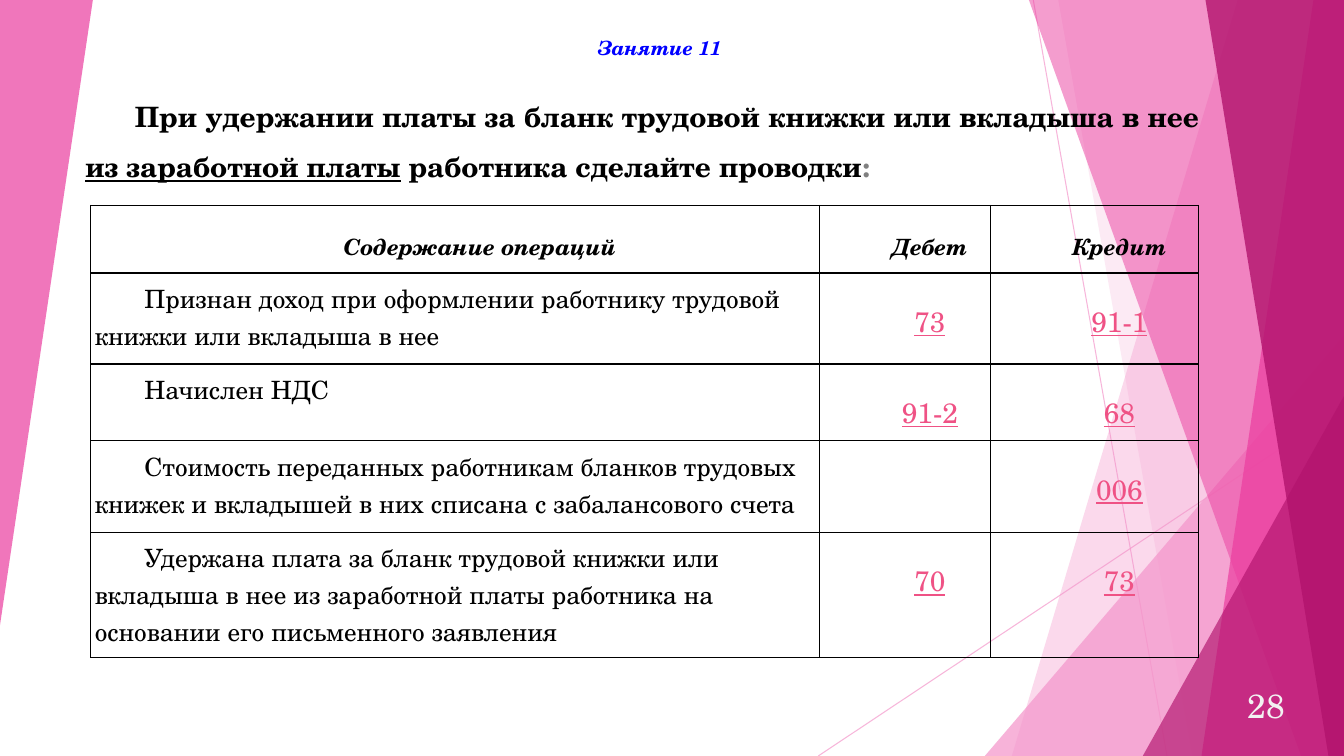
from lxml import etree
from pptx import Presentation
from pptx.dml.color import RGBColor
from pptx.enum.shapes import MSO_CONNECTOR, MSO_SHAPE
from pptx.enum.text import MSO_ANCHOR, PP_ALIGN
from pptx.oxml.ns import qn
from pptx.util import Cm, Pt

LEFT, CENTER = PP_ALIGN.LEFT, PP_ALIGN.CENTER
RIGHT, JUSTIFY = PP_ALIGN.RIGHT, PP_ALIGN.JUSTIFY
TOP, MIDDLE = MSO_ANCHOR.TOP, MSO_ANCHOR.MIDDLE
STRAIGHT, TRIANGLE = MSO_CONNECTOR.STRAIGHT, MSO_SHAPE.ISOSCELES_TRIANGLE

FONT = "TeX Gyre Schola"
BLACK, BLUE, GRAY, PALE = "000000", "0000FF", "808080", "F2F2F2"
LIGHT_PINK, PINK, CRIMSON, ACCOUNT = "F496CB", "EB3D9F", "B2136D", "EF5285"
W, H = 33.87, 19.05
INDENT = 1.25

LESSON = "Занятие 11"
HEADING = [
    ("При удержании платы за бланк трудовой книжки или вкладыша в нее ", {}),
    ("из заработной платы", {"underline": True}),
    (" работника сделайте проводки", {}),
    (":", {"color": GRAY}),
]
PAGE = "28"
ENTRIES = [
    ("Содержание операций", "Дебет", "Кредит"),
    ("Признан доход при оформлении работнику трудовой книжки или вкладыша в нее",
     "73", "91-1"),
    ("Начислен НДС", "91-2", "68"),
    ("Стоимость переданных работникам бланков трудовых книжек и вкладышей в них "
     "списана с забалансового счета", "", "006"),
    ("Удержана плата за бланк трудовой книжки или вкладыша в нее из заработной "
     "платы работника на основании его письменного заявления", "70", "73"),
]
COL_WIDTHS = [18.36, 4.32, 5.23]
ROW_HEIGHTS = [1.7, 2.29, 1.93, 2.31, 3.15]

# Thin lines: x1, y1, x2, y2
RAYS = [(26.04, 0, 29.41, H), (W, 10.24, 20.62, H)]
# Bands reaching the right edge: x at the top, x at the bottom, colour, opacity
# Triangles: left, top, width, height, rotation, colour, opacity
DECOR = [
    (31.19, 25.5, LIGHT_PINK, 36),
    (26.67, 30.05, LIGHT_PINK, 20),
    (24.82, 8.46, W - 24.82, H - 8.46, 0, LIGHT_PINK, 72),
    (25.93, 32.79, PINK, 50),
    (33.1, 30.28, PINK, 70),
    (30.38, 33.48, CRIMSON, 80),
    (28.8, 9.98, W - 28.8, H - 9.98, 0, CRIMSON, 66),
    (0, 0, 2.34, 15.75, 180, PINK, 70),
]


def paint(fill, color, opacity=100):
    fill.solid()
    fill.fore_color.rgb = RGBColor.from_string(color)
    if opacity < 100:
        clr = next(fill._xPr.iter(qn("a:srgbClr")))
        etree.SubElement(clr, qn("a:alpha")).set("val", str(opacity * 1000))


def add_ray(shapes, x1, y1, x2, y2):
    ray = shapes.add_connector(STRAIGHT, Cm(x1), Cm(y1), Cm(x2), Cm(y2))
    ray.line.width = Pt(0.75)
    paint(ray.line.fill, LIGHT_PINK, 70)
    etree.SubElement(ray._element.spPr, qn("a:effectLst"))


def add_band(shapes, x_top, x_bottom):
    builder = shapes.build_freeform(Cm(x_top), 0)
    corners = [(W, 0), (W, H), (x_bottom, H)]
    builder.add_line_segments([(Cm(x), Cm(y)) for x, y in corners], close=True)
    return builder.convert_to_shape()


def add_triangle(shapes, x, y, w, h, rotation):
    sp = shapes.add_shape(TRIANGLE, Cm(x), Cm(y), Cm(w), Cm(h))
    sp.adjustments[0] = 1
    sp.rotation = rotation
    return sp


def write(p, runs, size, align, color=BLACK, bold=False, italic=False,
          underline=False, spacing=1.0, before=0, after=0, indent=0):
    """Fill a paragraph with (text, overrides) runs."""
    p.alignment = align
    p.line_spacing = spacing
    p.space_before, p.space_after = Pt(before), Pt(after)
    p._p.get_or_add_pPr().set("indent", str(Cm(indent)))
    for text, own in runs:
        r = p.add_run()
        r.text = text
        r.font.name, r.font.size = FONT, Pt(size)
        r.font.bold, r.font.italic = bold, italic
        r.font.underline = own.get("underline", underline)
        paint(r.font.fill, own.get("color", color))


def add_text(shapes, x, y, w, h, anchor, runs, size, align, **style):
    tf = shapes.add_textbox(Cm(x), Cm(y), Cm(w), Cm(h)).text_frame
    tf.word_wrap = True
    tf.vertical_anchor = anchor
    write(tf.paragraphs[0], runs, size, align, **style)


def outline(cell):
    """Give a cell thin black borders and no fill."""
    tc_pr = cell._tc.get_or_add_tcPr()
    for side in ("a:lnL", "a:lnR", "a:lnT", "a:lnB"):
        ln = etree.SubElement(tc_pr, qn(side), w=str(Pt(1)))
        solid = etree.SubElement(ln, qn("a:solidFill"))
        etree.SubElement(solid, qn("a:srgbClr"), val=BLACK)
    cell.fill.background()


def add_entries(shapes, x, y):
    frame = shapes.add_table(len(ENTRIES), len(COL_WIDTHS), Cm(x), Cm(y),
                             Cm(sum(COL_WIDTHS)), Cm(sum(ROW_HEIGHTS)))
    table = frame.table
    table.first_row = table.horz_banding = False
    for col, width in zip(table.columns, COL_WIDTHS):
        col.width = Cm(width)
    for row, height in zip(table.rows, ROW_HEIGHTS):
        row.height = Cm(height)
    spaced = {"align": CENTER, "spacing": 1.5, "before": 4, "after": 4}
    header = {"size": 16, "bold": True, "italic": True, **spaced}
    account = {"size": 20, "color": ACCOUNT, "underline": True, **spaced}
    operation = {"size": 18, "align": LEFT}
    for i, entry in enumerate(ENTRIES):
        for j, text in enumerate(entry):
            cell = table.cell(i, j)
            cell.margin_left = cell.margin_right = Cm(0.1)
            cell.margin_top = cell.margin_bottom = Cm(0.18)
            outline(cell)
            style = header if i == 0 else account if j else operation
            if text:
                write(cell.text_frame.paragraphs[0], [(text, {})],
                      indent=INDENT, **style)


def main():
    prs = Presentation()
    prs.slide_width, prs.slide_height = Cm(W), Cm(H)
    shapes = prs.slides.add_slide(prs.slide_layouts[6]).shapes
    for ray in RAYS:
        add_ray(shapes, *ray)
    for *place, color, opacity in DECOR:
        add = add_band if len(place) == 2 else add_triangle
        sp = add(shapes, *place)
        sp.shadow.inherit = False
        sp.line.fill.background()
        paint(sp.fill, color, opacity)
    add_text(shapes, 1.9, 1.96, 28.58, 3.1, TOP, HEADING, 20, JUSTIFY,
             bold=True, spacing=1.5, before=10, indent=INDENT)
    add_text(shapes, 30.73, 17.25, 1.9, 1.02, MIDDLE, [(PAGE, {})], 24, RIGHT,
             color=PALE)
    add_text(shapes, 2.53, 0.7, 28.2, 1, MIDDLE, [(LESSON, {})], 14, CENTER,
             color=BLUE, bold=True, italic=True)
    add_entries(shapes, 2.29, 5.18)
    prs.save("out.pptx")


if __name__ == "__main__":
    main()
